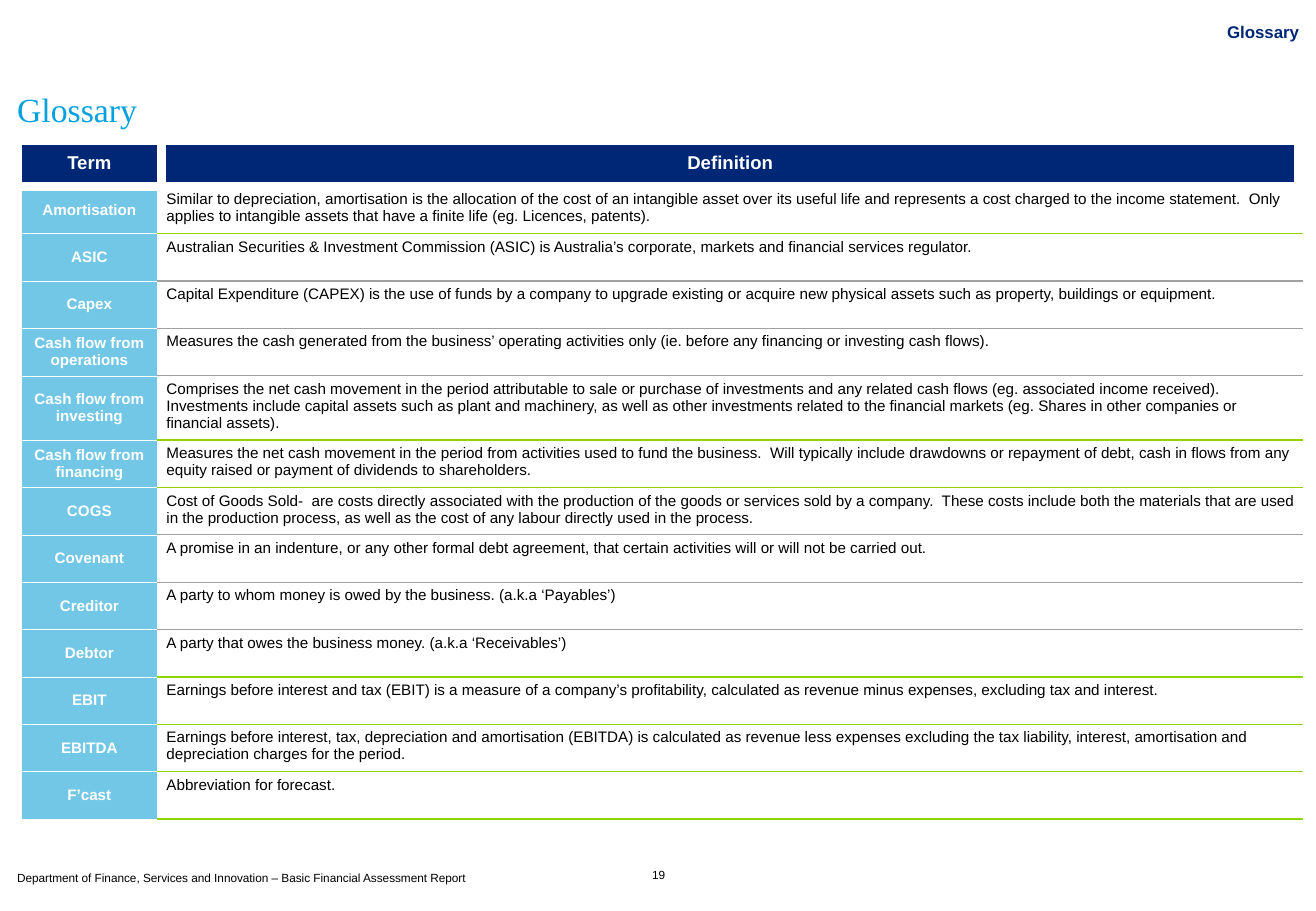
"""Build the glossary slide of a financial assessment report."""
from lxml import etree
from pptx import Presentation
from pptx.dml.color import RGBColor
from pptx.enum.text import MSO_ANCHOR, PP_ALIGN
from pptx.oxml.ns import qn
from pptx.util import Inches, Pt

LEFT, CENTER, RIGHT = PP_ALIGN.LEFT, PP_ALIGN.CENTER, PP_ALIGN.RIGHT
TOP, MIDDLE, BOTTOM = MSO_ANCHOR.TOP, MSO_ANCHOR.MIDDLE, MSO_ANCHOR.BOTTOM
NAVY, SKY, CYAN, GREEN = "002776", "72C7E7", "00A1DE", "92D400"
GREY, WHITE, BLACK = "A0A0A0", "FFFFFF", "000000"

ENTRIES = [
    ("Amortisation", "Similar to depreciation, amortisation is the allocation of the cost of an intangible asset over its useful life and represents a cost charged to the income statement.  Only applies to intangible assets that have a finite life (eg. Licences, patents).", GREEN),
    ("ASIC", "Australian Securities & Investment Commission (ASIC) is Australia’s corporate, markets and financial services regulator.", GREY),
    ("Capex", "Capital Expenditure (CAPEX) is the use of funds by a company to upgrade existing or acquire new physical assets such as property, buildings or equipment.", GREY),
    ("Cash flow from operations", "Measures the cash generated from the business’ operating activities only (ie. before any financing or investing cash flows).", GREY),
    ("Cash flow from investing", "Comprises the net cash movement in the period attributable to sale or purchase of investments and any related cash flows (eg. associated income received).  Investments include capital assets such as plant and machinery, as well as other investments related to the financial markets (eg. Shares in other companies or financial assets).", GREEN),
    ("Cash flow from financing", "Measures the net cash movement in the period from activities used to fund the business.  Will typically include drawdowns or repayment of debt, cash in flows from any equity raised or payment of dividends to shareholders.", GREEN),
    ("COGS", "Cost of Goods Sold-  are costs directly associated with the production of the goods or services sold by a company.  These costs include both the materials that are used in the production process, as well as the cost of any labour directly used in the process.", GREY),
    ("Covenant", "A promise in an indenture, or any other formal debt agreement, that certain activities will or will not be carried out.", GREY),
    ("Creditor", "A party to whom money is owed by the business. (a.k.a ‘Payables’)", GREY),
    ("Debtor", "A party that owes the business money. (a.k.a ‘Receivables’)", GREEN),
    ("EBIT", "Earnings before interest and tax (EBIT) is a measure of a company’s profitability, calculated as revenue minus expenses, excluding tax and interest.", GREEN),
    ("EBITDA", "Earnings before interest, tax, depreciation and amortisation (EBITDA) is calculated as revenue less expenses excluding the tax liability, interest, amortisation and depreciation charges for the period.", GREEN),
    ("F’cast", "Abbreviation for forecast.", GREEN),
]


def color(hex_string):
    return RGBColor.from_string(hex_string)


def write(frame, text, size, hex_string, align=LEFT, bold=False, font="Arial"):
    paragraph = frame.paragraphs[0]
    paragraph.alignment = align
    paragraph.space_before = Pt(0)
    run = paragraph.add_run()
    run.text = text
    run.font.name = font
    run.font.size = Pt(size)
    run.font.bold = bold
    run.font.color.rgb = color(hex_string)


prs = Presentation()
prs.slide_width, prs.slide_height = Inches(10.83), Inches(7.5)
slide = prs.slides.add_slide(prs.slide_layouts[1])

section = slide.shapes.title
heading = slide.placeholders[1]
footer = slide.shapes.add_textbox(0, 0, 0, 0)
page_number = slide.shapes.add_textbox(0, 0, 0, 0)
for part, box, anchor in [
    (section, (6.62, 0.18, 4.07, 0.17), TOP),
    (heading, (0.14, 0.34, 10.56, 1.12), MIDDLE),
    (footer, (0.14, 7.13, 10.55, 0.2), MIDDLE),
    (page_number, (5.27, 7.14, 0.3, 0.12), BOTTOM),
]:
    part.left, part.top, part.width, part.height = map(Inches, box)
    frame = part.text_frame
    frame.margin_left = frame.margin_right = frame.margin_top = frame.margin_bottom = 0
    frame.word_wrap = True
    frame.vertical_anchor = anchor

write(section.text_frame, "Glossary", 10, NAVY, RIGHT, bold=True)
write(heading.text_frame, "Glossary", 20, CYAN, font="Times New Roman")
heading_format = heading.text_frame.paragraphs[0]._p.get_or_add_pPr()
heading_format.set("marL", "0")
heading_format.set("indent", "0")
etree.SubElement(heading_format, qn("a:buNone"))
write(footer.text_frame, "Department of Finance, Services and Innovation – Basic Financial Assessment Report", 7, BLACK)
write(page_number.text_frame, "19", 7, BLACK, CENTER)

glossary = slide.shapes.add_table(
    len(ENTRIES) + 1, 2, Inches(0.14), Inches(1.19), Inches(10.55), Inches(5.51)
).table
glossary.horz_banding = False
glossary.columns[0].width, glossary.columns[1].width = Inches(1.19), Inches(9.36)

gap, hairline = (WHITE, 6), (WHITE, 0.25)
rules_above = [hairline, hairline]
for row, (term, definition, rule) in enumerate([("Term", "Definition", WHITE)] + ENTRIES):
    header = row == 0
    glossary.rows[row].height = Inches(0.33 if header else 0.5 if term == "Cash flow from investing" else 0.39)
    rules_below = [gap, gap] if header else [hairline, (rule, 1 if rule == GREEN else 0.75)]
    for column, text in enumerate((term, definition)):
        cell = glossary.cell(row, column)
        label = header or column == 0
        cell.margin_left = cell.margin_right = Inches(0.1 if header else 0.04)
        cell.margin_top = Inches(0.06 if header else 0.04)
        cell.margin_bottom = Inches(0.1 if header else 0.04)
        cell.vertical_anchor = MIDDLE if label else TOP
        cell.fill.solid()
        cell.fill.fore_color.rgb = color(NAVY if header else SKY if label else WHITE)
        write(cell.text_frame, text, 11 if header else 9, WHITE if label else BLACK,
              CENTER if label else LEFT, bold=label)
        borders = {"lnL": gap, "lnR": gap, "lnT": rules_above[column], "lnB": rules_below[column]}
        for position, (side, (hex_string, width)) in enumerate(borders.items()):
            line = etree.Element(qn(f"a:{side}"), w=str(Pt(width)))
            fill = etree.SubElement(line, qn("a:solidFill"))
            etree.SubElement(fill, qn("a:srgbClr"), val=hex_string)
            cell._tc.get_or_add_tcPr().insert(position, line)
    rules_above = rules_below

prs.save("out.pptx")
